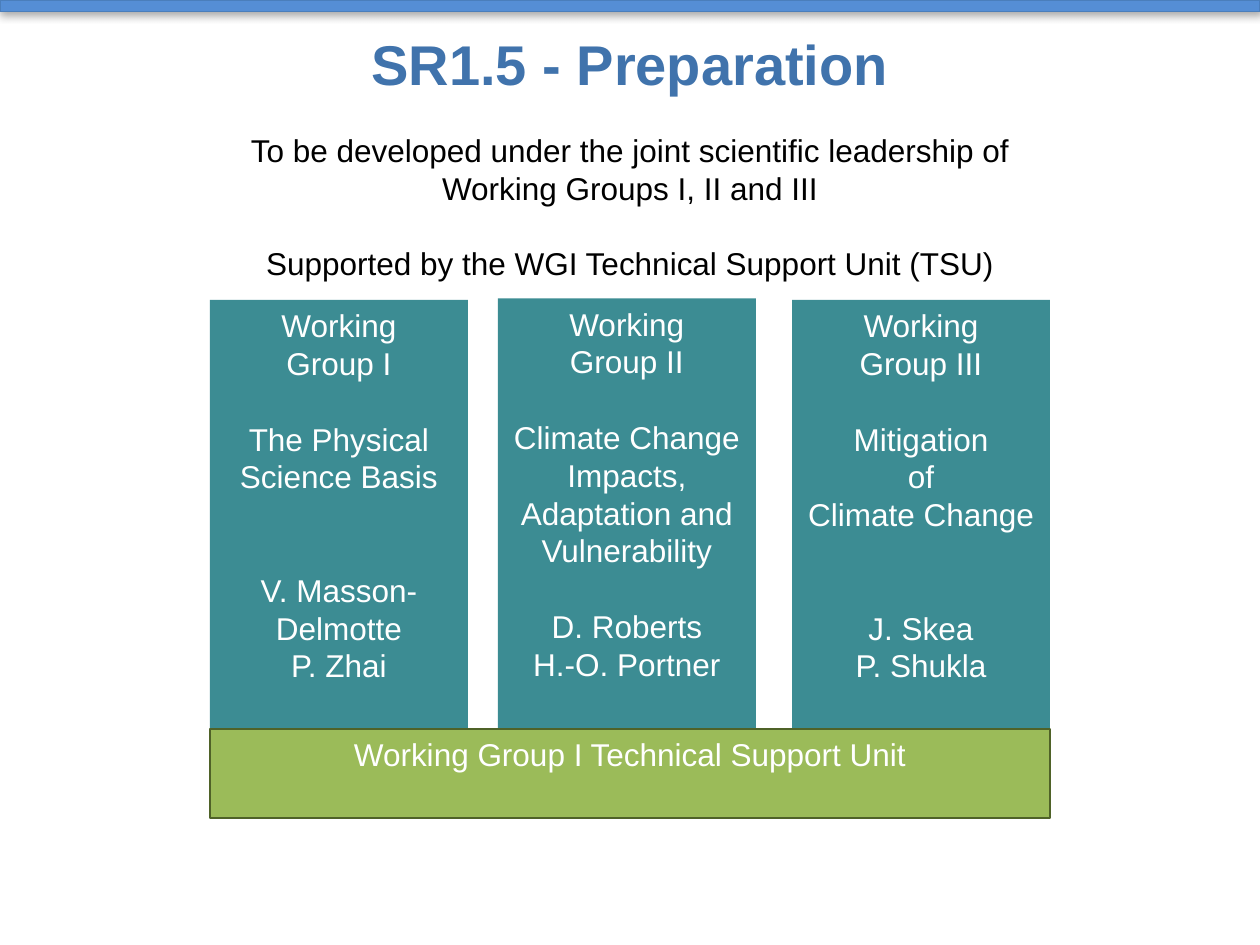
from lxml import etree
from pptx import Presentation
from pptx.dml.color import RGBColor
from pptx.enum.shapes import MSO_SHAPE
from pptx.enum.text import MSO_ANCHOR, PP_ALIGN
from pptx.oxml.ns import qn
from pptx.util import Pt

RECTANGLE = MSO_SHAPE.RECTANGLE
TOP, CENTER = MSO_ANCHOR.TOP, PP_ALIGN.CENTER

BLACK, WHITE = RGBColor(0, 0, 0), RGBColor(255, 255, 255)
BAR_BLUE, BAR_EDGE = RGBColor(0x55, 0x8E, 0xD5), RGBColor(0x4A, 0x7E, 0xBB)
TITLE_BLUE = RGBColor(0x40, 0x73, 0xAC)
TEAL = RGBColor(0x3C, 0x8C, 0x93)
GREEN, DARK_GREEN = RGBColor(0x9B, 0xBB, 0x59), RGBColor(0x4F, 0x62, 0x28)

# Content: each paragraph is (text, lines of space before it)
TITLE = [("SR1.5 - Preparation", 0)]
INTRODUCTION = [
    ("To be developed under the joint scientific leadership of "
     "Working Groups I, II and III", 0),
    ("Supported by the WGI Technical Support Unit (TSU)", 1),
]
# Working groups: left, top, paragraphs
WORKING_GROUPS = [
    (120, 171.4, [("Working\vGroup I", 0), ("The Physical Science Basis", 1),
                  ("V. Masson-Delmotte", 2), ("P. Zhai", 0)]),
    (284.5, 170.6, [("Working\vGroup II", 0),
                    ("Climate Change Impacts, Adaptation and Vulnerability", 1),
                    ("D. Roberts", 1), ("H.-O. Portner", 0)]),
    (452.6, 171.4, [("Working\vGroup III", 0),
                    ("Mitigation\vof\vClimate Change", 1),
                    ("J. Skea", 2), ("P. Shukla", 0)]),
]
SUPPORT_UNIT = [("Working Group I Technical Support Unit", 0)]

GROUP_WIDTH, GROUP_HEIGHT = 147.4, 247
LINE_FACTOR = 1.2
BODY = {"name": "Arial", "size": Pt(18), "bold": False}
HEADING = {"name": "Arial", "size": Pt(32), "bold": True}


def write(shape, paragraphs, color, style=BODY, margin_top=3.6):
    frame = shape.text_frame
    frame.word_wrap = True
    frame.vertical_anchor = TOP
    frame.margin_top = Pt(margin_top)
    pitch = style["size"].pt * LINE_FACTOR
    for index, (text, lines_before) in enumerate(paragraphs):
        paragraph = frame.paragraphs[0] if index == 0 else frame.add_paragraph()
        paragraph.text = text
        paragraph.alignment = CENTER
        paragraph.line_spacing = Pt(pitch)
        paragraph.space_before = Pt(pitch * lines_before)
        for name, value in style.items():
            setattr(paragraph.font, name, value)
        paragraph.font.color.rgb = color


def add_box(slide, bounds, fill, edge=None):
    shape = slide.shapes.add_shape(RECTANGLE, *map(Pt, bounds))
    shape.shadow.inherit = False
    shape.fill.solid()
    shape.fill.fore_color.rgb = fill
    if edge is None:
        shape.line.fill.background()
    else:
        shape.line.color.rgb = edge
        shape.line.width = Pt(0.75)
    return shape


def add_shadow(shape):
    effects = shape._element.spPr.find(qn("a:effectLst"))
    shadow = etree.SubElement(effects, qn("a:outerShdw"), blurRad=str(Pt(5)),
                              dist=str(Pt(1.8)), dir="5400000", rotWithShape="0")
    color = etree.SubElement(shadow, qn("a:srgbClr"), val=str(BLACK))
    etree.SubElement(color, qn("a:alpha"), val="35000")


def main():
    presentation = Presentation()
    presentation.slide_width, presentation.slide_height = Pt(720), Pt(540)
    slide = presentation.slides.add_slide(presentation.slide_layouts[6])

    # Top bar
    add_shadow(add_box(slide, (0, 0, 720, 6.5), BAR_BLUE, BAR_EDGE))

    # Introduction
    introduction = slide.shapes.add_textbox(Pt(116), Pt(71.3), Pt(488), Pt(94.3))
    write(introduction, INTRODUCTION, BLACK)

    # Working groups standing on their support unit
    for left, top, paragraphs in WORKING_GROUPS:
        group = add_box(slide, (left, top, GROUP_WIDTH, GROUP_HEIGHT), TEAL)
        write(group, paragraphs, WHITE)
    support_unit = add_box(slide, (120, 416.5, 480, 51), GREEN, DARK_GREEN)
    write(support_unit, SUPPORT_UNIT, WHITE)

    # Title
    title = slide.shapes.add_textbox(Pt(36.7), Pt(12.2), Pt(646.6), Pt(40.3))
    write(title, TITLE, TITLE_BLUE, HEADING, margin_top=4.6)

    presentation.save("out.pptx")


if __name__ == "__main__":
    main()
